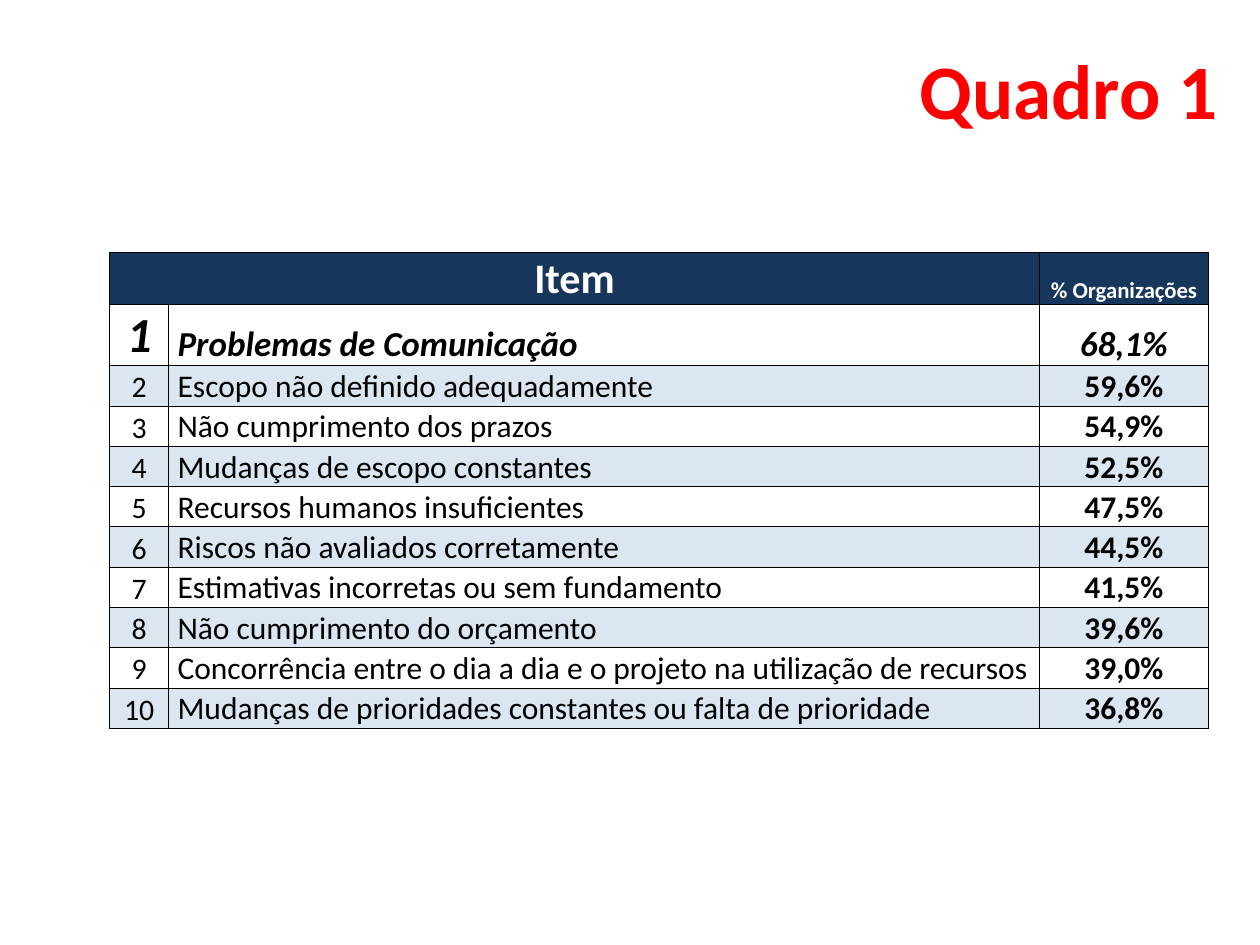
from lxml import etree
from pptx import Presentation
from pptx.dml.color import RGBColor
from pptx.enum.text import MSO_ANCHOR, MSO_AUTO_SIZE, PP_ALIGN
from pptx.oxml.ns import qn
from pptx.util import Inches, Pt

FONT = "Calibri"
RED = RGBColor(0xFF, 0x00, 0x00)
WHITE = RGBColor(0xFF, 0xFF, 0xFF)
BLACK = RGBColor(0x00, 0x00, 0x00)
NAVY = RGBColor(0x16, 0x36, 0x5C)
PALE_BLUE = RGBColor(0xDC, 0xE6, 0xF1)

COLUMN_WIDTHS = [0.47, 6.91, 1.34]
HEADER_HEIGHT = TOP_ITEM_HEIGHT = 0.41
ROW_HEIGHT = 0.32
INSET = 0.01
TEXT_INSET = 0.07

ITEMS = [
    ("Problemas de Comunicação", "68,1%"),
    ("Escopo não definido adequadamente", "59,6%"),
    ("Não cumprimento dos prazos", "54,9%"),
    ("Mudanças de escopo constantes", "52,5%"),
    ("Recursos humanos insuficientes", "47,5%"),
    ("Riscos não avaliados corretamente", "44,5%"),
    ("Estimativas incorretas ou sem fundamento", "41,5%"),
    ("Não cumprimento do orçamento", "39,6%"),
    ("Concorrência entre o dia a dia e o projeto na utilização de recursos", "39,0%"),
    ("Mudanças de prioridades constantes ou falta de prioridade", "36,8%"),
]


def format_runs(p, size, color, bold=False, italic=False):
    for r in p.runs:
        r.font.name = FONT
        r.font.size = Pt(size)
        r.font.bold = bold
        r.font.italic = italic
        r.font.color.rgb = color


def add_borders(cell):
    """Put a thin black line on all four sides, ahead of the cell's fill."""
    tc_pr = cell._tc.get_or_add_tcPr()
    for i, side in enumerate(("a:lnL", "a:lnR", "a:lnT", "a:lnB")):
        line = etree.Element(qn(side), w=str(Pt(0.5)))
        fill = etree.SubElement(line, qn("a:solidFill"))
        etree.SubElement(fill, qn("a:srgbClr"), val=str(BLACK))
        tc_pr.insert(i, line)


def style_cell(cell, fill):
    cell.margin_left = cell.margin_right = cell.margin_top = Inches(INSET)
    cell.margin_bottom = 0
    cell.vertical_anchor = MSO_ANCHOR.BOTTOM
    if fill is None:
        cell.fill.background()
    else:
        cell.fill.solid()
        cell.fill.fore_color.rgb = fill
    add_borders(cell)


def write_cell(cell, text, size, color=BLACK, bold=False, italic=False,
               align=PP_ALIGN.CENTER):
    cell.text_frame.text = text
    p = cell.text_frame.paragraphs[0]
    p.alignment = align
    format_runs(p, size, color, bold, italic)


def add_title(s, text):
    tf = s.shapes.add_textbox(Inches(7.2), Inches(0.29),
                              Inches(2.59), Inches(0.84)).text_frame
    tf.word_wrap = False
    tf.auto_size = MSO_AUTO_SIZE.SHAPE_TO_FIT_TEXT
    tf.text = text
    format_runs(tf.paragraphs[0], 44, RED, bold=True)


def add_ranking_table(s):
    heights = [HEADER_HEIGHT, TOP_ITEM_HEIGHT] + [ROW_HEIGHT] * (len(ITEMS) - 1)
    table = s.shapes.add_table(len(heights), len(COLUMN_WIDTHS), Inches(0.87), Inches(2),
                               Inches(sum(COLUMN_WIDTHS)), Inches(sum(heights))).table
    table.first_row = table.horz_banding = False
    for column, width in zip(table.columns, COLUMN_WIDTHS):
        column.width = Inches(width)
    for i, (row, height) in enumerate(zip(table.rows, heights)):
        row.height = Inches(height)
        fill = NAVY if i == 0 else PALE_BLUE if i % 2 == 0 else None
        for cell in row.cells:
            style_cell(cell, fill)

    table.cell(0, 0).merge(table.cell(0, 1))
    table.cell(0, 0).vertical_anchor = MSO_ANCHOR.MIDDLE
    write_cell(table.cell(0, 0), "Item", 24, WHITE, bold=True)
    write_cell(table.cell(0, 2), "% Organizações", 13, WHITE, bold=True)

    for rank, (item, share) in enumerate(ITEMS, start=1):
        top = rank == 1
        number_size, text_size = (28, 20) if top else (17, 18)
        write_cell(table.cell(rank, 0), str(rank), number_size, bold=top, italic=top)
        write_cell(table.cell(rank, 1), item, text_size, bold=top, italic=top,
                   align=PP_ALIGN.LEFT)
        table.cell(rank, 1).margin_left = Inches(TEXT_INSET)
        write_cell(table.cell(rank, 2), share, text_size, bold=True, italic=top)


def main():
    prs = Presentation()
    prs.slide_width = Inches(10)
    prs.slide_height = Inches(7.5)
    s = prs.slides.add_slide(prs.slide_layouts[6])
    add_ranking_table(s)
    add_title(s, "Quadro 1")
    prs.save("out.pptx")


if __name__ == "__main__":
    main()
